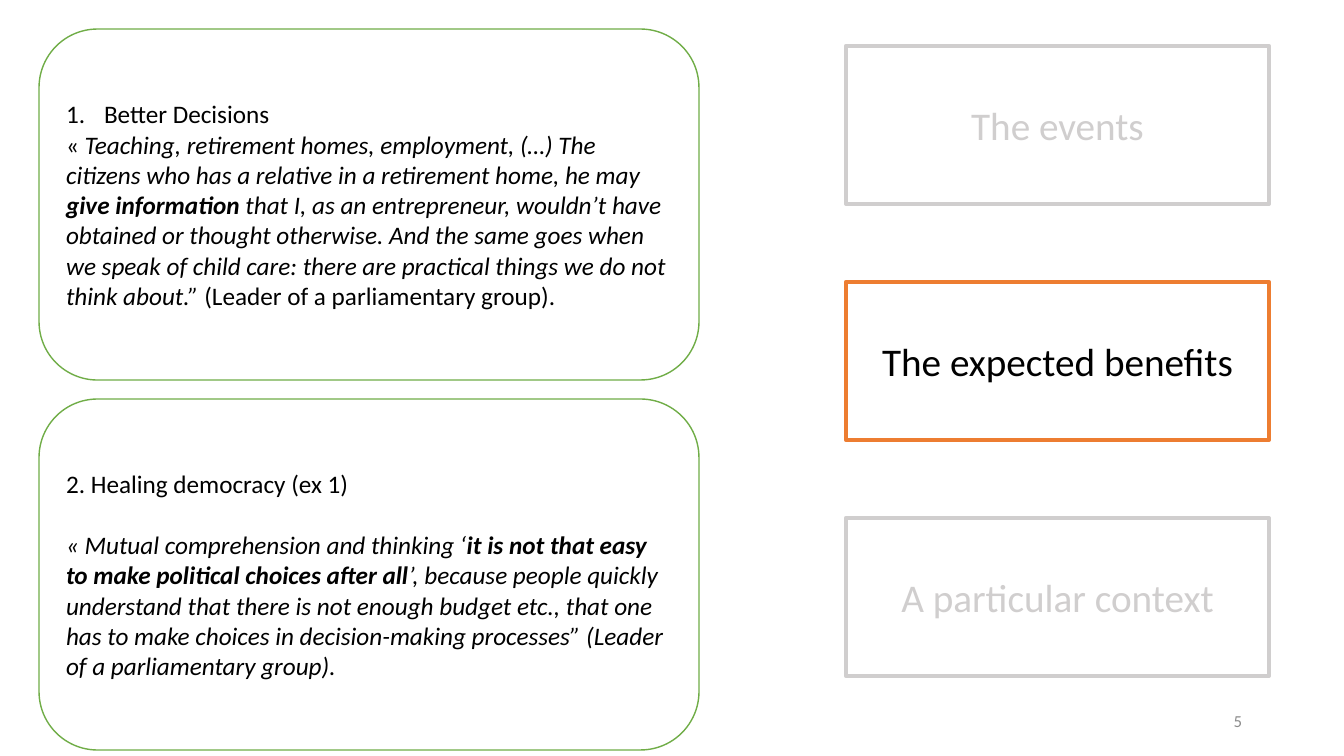
"""Build the slide on the expected benefits, with two quotes and three topics."""
from lxml import etree
from pptx import Presentation
from pptx.dml.color import RGBColor
from pptx.enum.shapes import MSO_SHAPE
from pptx.enum.text import MSO_ANCHOR, PP_ALIGN
from pptx.oxml.ns import qn
from pptx.util import Emu, Pt

RECTANGLE = MSO_SHAPE.RECTANGLE
ROUNDED = MSO_SHAPE.ROUNDED_RECTANGLE
MIDDLE = MSO_ANCHOR.MIDDLE
LEFT, CENTER, RIGHT = PP_ALIGN.LEFT, PP_ALIGN.CENTER, PP_ALIGN.RIGHT

BLACK, WHITE, GREY = "000000", "FFFFFF", "D0CECE"
ORANGE, GREEN, NUMBER_GREY = "ED7D31", "70AD47", "8C8C8C"

TOPICS = [
    ("The events", GREY, GREY),
    ("The expected benefits", ORANGE, BLACK),
    ("A particular context", GREY, GREY),
]
QUOTES = [
    ("Better Decisions", True, 0, [
        ("« ", ""),
        ("Teaching, retirement homes, employment, (…) The citizens who has a "
         "relative in a retirement home, he may ", "i"),
        ("give information ", "bi"),
        ("that I, as an entrepreneur, wouldn’t have obtained or thought "
         "otherwise. And the same goes when we speak of child care: there are "
         "practical things we do not think about.” ", "i"),
        ("(Leader of a parliamentary group).", ""),
    ]),
    ("2. Healing democracy (ex 1)", False, 22, [
        ("« Mutual comprehension and thinking ‘", "i"),
        ("it is not that easy to make political choices after all", "bi"),
        ("’, because people quickly understand that there is not enough budget "
         "etc., that one has to make choices in decision-making processes” "
         "(Leader of a parliamentary group).", "i"),
    ]),
]


def px(length):
    """Turn whole pixels into EMU."""
    return Emu(round(length * 914400 / 100.8))


def rgb(code):
    """Turn a hex string into a colour."""
    return RGBColor.from_string(code)


class SlideBuilder:
    """Hold the style and the current slide."""

    font = "Calibri"

    def __init__(self, slide):
        """Keep the slide to draw on."""
        self.slide = slide

    def panel(self, outline, box, line_color, line_width):
        """Add a white outlined panel and return its text frame."""
        panel = self.slide.shapes.add_shape(outline, *map(px, box))
        panel.shadow.inherit = False
        panel.fill.solid()
        panel.fill.fore_color.rgb = rgb(WHITE)
        panel.line.color.rgb = rgb(line_color)
        panel.line.width = Pt(line_width)
        return self.prepare(panel.text_frame)

    def prepare(self, frame):
        """Wrap the text and centre it vertically."""
        frame.word_wrap = True
        frame.vertical_anchor = MIDDLE
        return frame

    def fill_paragraph(self, paragraph, pieces, size, color, align=LEFT):
        """Fill a paragraph with pieces of text and their styles."""
        paragraph.alignment = align
        for text, style in pieces:
            run = paragraph.add_run()
            run.text = text
            run.font.name = self.font
            run.font.size = Pt(size)
            run.font.color.rgb = rgb(color)
            run.font.bold = "b" in style
            run.font.italic = "i" in style

    def number(self, paragraph, indent):
        """Give a paragraph an automatic number with a hanging indent."""
        properties = paragraph._p.get_or_add_pPr()
        properties.set("marL", str(px(indent)))
        properties.set("indent", str(-px(indent)))
        numbering = etree.SubElement(properties, qn("a:buAutoNum"))
        numbering.set("type", "arabicPeriod")

    def topic(self, box, label, line_color, text_color):
        """Add a topic box with a centred label."""
        frame = self.panel(RECTANGLE, box, line_color, 3)
        self.fill_paragraph(
            frame.paragraphs[0], [(label, "")], 28, text_color, CENTER)

    def quote(self, box, heading, numbered, gap, pieces):
        """Add a rounded panel with a heading above a quote."""
        frame = self.panel(ROUNDED, box, GREEN, 1)
        heading_line = frame.paragraphs[0]
        self.fill_paragraph(heading_line, [(heading, "")], 18, BLACK)
        heading_line.space_after = Pt(gap)
        if numbered:
            self.number(heading_line, 38)
        self.fill_paragraph(frame.add_paragraph(), pieces, 18, BLACK)

    def page_number(self, box, label):
        """Add the page number, set to the right."""
        number_box = self.slide.shapes.add_textbox(*map(px, box))
        frame = self.prepare(number_box.text_frame)
        self.fill_paragraph(
            frame.paragraphs[0], [(label, "")], 12, NUMBER_GREY, RIGHT)


def main():
    """Build and save the slide."""
    deck = Presentation()
    deck.slide_width, deck.slide_height = px(1344), px(756)
    builder = SlideBuilder(deck.slides.add_slide(deck.slide_layouts[6]))
    for row, topic in enumerate(TOPICS):
        builder.topic((846, 46 + 236 * row, 423, 158), *topic)
    for row, quote in enumerate(QUOTES):
        builder.quote((39, 29 + 370 * row, 660, 351), *quote)
    builder.page_number((950, 701, 302, 40), "5")
    deck.save("out.pptx")


if __name__ == "__main__":
    main()
